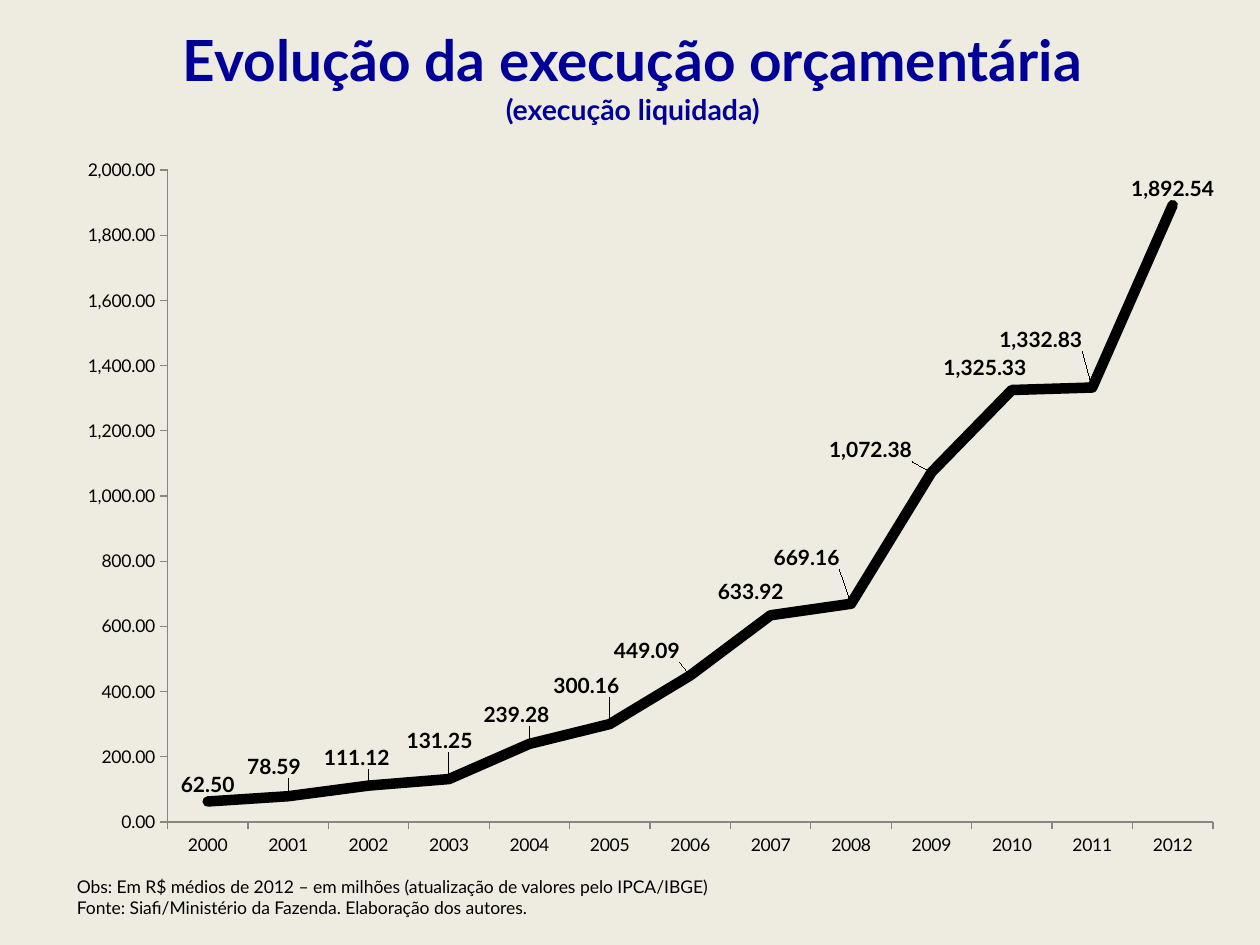
from lxml.etree import SubElement
from pptx import Presentation
from pptx.chart.data import CategoryChartData
from pptx.dml.color import RGBColor
from pptx.enum.chart import XL_CHART_TYPE as ChartType
from pptx.enum.chart import XL_LABEL_POSITION as LabelPos
from pptx.enum.chart import XL_MARKER_STYLE as Marker
from pptx.enum.chart import XL_TICK_MARK as Tick
from pptx.enum.text import MSO_ANCHOR as Anchor
from pptx.enum.text import PP_ALIGN as Align
from pptx.oxml.ns import qn
from pptx.util import Cm, Pt

FONT = "Lato"
BLACK, NAVY, CREAM, GREY = "000000", "000099", "EEECE1", "868686"
NUMBER = "#,##0.00"

# Year, budget, and label shift (x, y) in percent of the chart
EXECUTION = [
    (2000, 62.50, None),
    (2001, 78.59, (-1.2, -1.8)),
    (2002, 111.12, (-1.0, -1.5)),
    (2003, 131.25, (-0.8, -3.0)),
    (2004, 239.28, (-1.1, -1.7)),
    (2005, 300.16, (-2.0, -3.0)),
    (2006, 449.09, (-3.7, -1.1)),
    (2007, 633.92, (-1.7, -1.0)),
    (2008, 669.16, (-3.8, -4.0)),
    (2009, 1072.38, (-5.2, -0.8)),
    (2010, 1325.33, (-2.3, -0.8)),
    (2011, 1332.83, (-4.4, -4.3)),
    (2012, 1892.54, None),
]


def rgb(value):
    return RGBColor.from_string(value)


def set_all(target, formats):
    for name, value in formats.items():
        setattr(target, name, value)


def set_font(font, size, color=BLACK, bold=False):
    set_all(font, {"name": FONT, "size": Pt(size), "bold": bold})
    font.color.rgb = rgb(color)


def add_manual_layout(parent, position, **values):
    """Insert a c:layout at the given child position."""
    layout = SubElement(parent, qn("c:layout"))
    parent.insert(position, layout)
    manual = SubElement(layout, qn("c:manualLayout"))
    for tag, value in values.items():
        SubElement(manual, qn(f"c:{tag}")).set("val", str(value))


def add_text_frame(slide, box, anchor):
    frame = slide.shapes.add_textbox(*box).text_frame
    set_all(frame, {"word_wrap": True, "vertical_anchor": anchor})
    return frame


def add_heading(slide, box):
    heading = add_text_frame(slide, box, Anchor.MIDDLE).paragraphs[0]
    heading.alignment = Align.CENTER
    title = heading.add_run()
    title.text = "Evolução da execução orçamentária"
    set_font(title.font, 32.4, NAVY, True)
    heading.add_line_break()
    subtitle = heading.add_run()
    subtitle.text = "(execução liquidada)"
    set_font(subtitle.font, 16.2, NAVY, True)


def add_notes_on_source(slide, box):
    frame = add_text_frame(slide, box, Anchor.TOP)
    frame.text = (
        "Obs: Em R$ médios de 2012 – em milhões (atualização de valores pelo IPCA/IBGE)\n"
        "Fonte: Siafi/Ministério da Fazenda. Elaboração dos autores."
    )
    for line in frame.paragraphs:
        set_font(line.runs[0].font, 10)


def label_points(series):
    labels = series.data_labels
    set_all(labels, {"show_value": True, "position": LabelPos.ABOVE,
                     "number_format": NUMBER, "number_format_is_linked": False})
    set_font(labels.font, 12, bold=True)

    # Labels moved away from the line
    shifts = {i: shift for i, (_, _, shift) in enumerate(EXECUTION) if shift}
    for i in shifts:
        label = series.points[i].data_label
        set_font(label.font, 12, bold=True)
        label.position = LabelPos.ABOVE
    for node in labels._element.findall(qn("c:dLbl")):
        dx, dy = shifts[int(node.find(qn("c:idx")).get("val"))]
        add_manual_layout(node, 1, x=dx / 100, y=dy / 100)
        number = SubElement(node, qn("c:numFmt"))
        set_number = {"formatCode": NUMBER, "sourceLinked": "0"}
        for name, value in set_number.items():
            number.set(name, value)
        node.insert(2, number)


def add_budget_chart(slide, box):
    data = CategoryChartData(number_format=NUMBER)
    data.categories = [str(year) for year, _, _ in EXECUTION]
    data.add_series("Series 1", [budget for _, budget, _ in EXECUTION])
    chart = slide.shapes.add_chart(ChartType.LINE, *box, data).chart
    set_all(chart, {"has_legend": False, "has_title": False})
    set_font(chart.font, 10)

    # Plot area
    plot_area = chart.plots[0]._element.getparent()
    for old in plot_area.findall(qn("c:layout")):
        plot_area.remove(old)
    add_manual_layout(plot_area, 0, layoutTarget="inner", xMode="edge", yMode="edge",
                      x=0.088, y=0.035, w=0.893, h=0.9)

    # Axes
    for axis in (chart.category_axis, chart.value_axis):
        set_all(axis, {"has_major_gridlines": False, "major_tick_mark": Tick.OUTSIDE,
                       "minor_tick_mark": Tick.NONE})
        axis.format.line.color.rgb = rgb(GREY)
        axis.format.line.width = Pt(0.75)
        set_font(axis.tick_labels.font, 10)
    set_all(chart.value_axis, {"minimum_scale": 0, "maximum_scale": 2000, "major_unit": 200})
    set_all(chart.value_axis.tick_labels,
            {"number_format": NUMBER, "number_format_is_linked": False})

    # Line
    chart.plots[0].vary_by_categories = False
    series = chart.plots[0].series[0]
    series.smooth = False
    series.marker.style = Marker.NONE
    line = series.format.line
    line.width = Pt(6)
    line.color.rgb = rgb(BLACK)
    line._get_or_add_ln().set("cap", "rnd")
    label_points(series)


def main():
    deck = Presentation()
    set_all(deck, {"slide_width": Cm(25.4), "slide_height": Cm(19.05)})
    slide = deck.slides.add_slide(deck.slide_layouts[6])
    slide.background.fill.solid()
    slide.background.fill.fore_color.rgb = rgb(CREAM)

    left = Cm(1.3)
    add_budget_chart(slide, (left, Cm(2.92), Cm(23.6), Cm(14.6)))
    add_notes_on_source(slide, (left, Cm(17.53), Cm(23.19), Cm(1.12)))
    add_heading(slide, (left, Cm(0.33), Cm(22.91), Cm(2.39)))
    deck.save("out.pptx")


if __name__ == "__main__":
    main()
